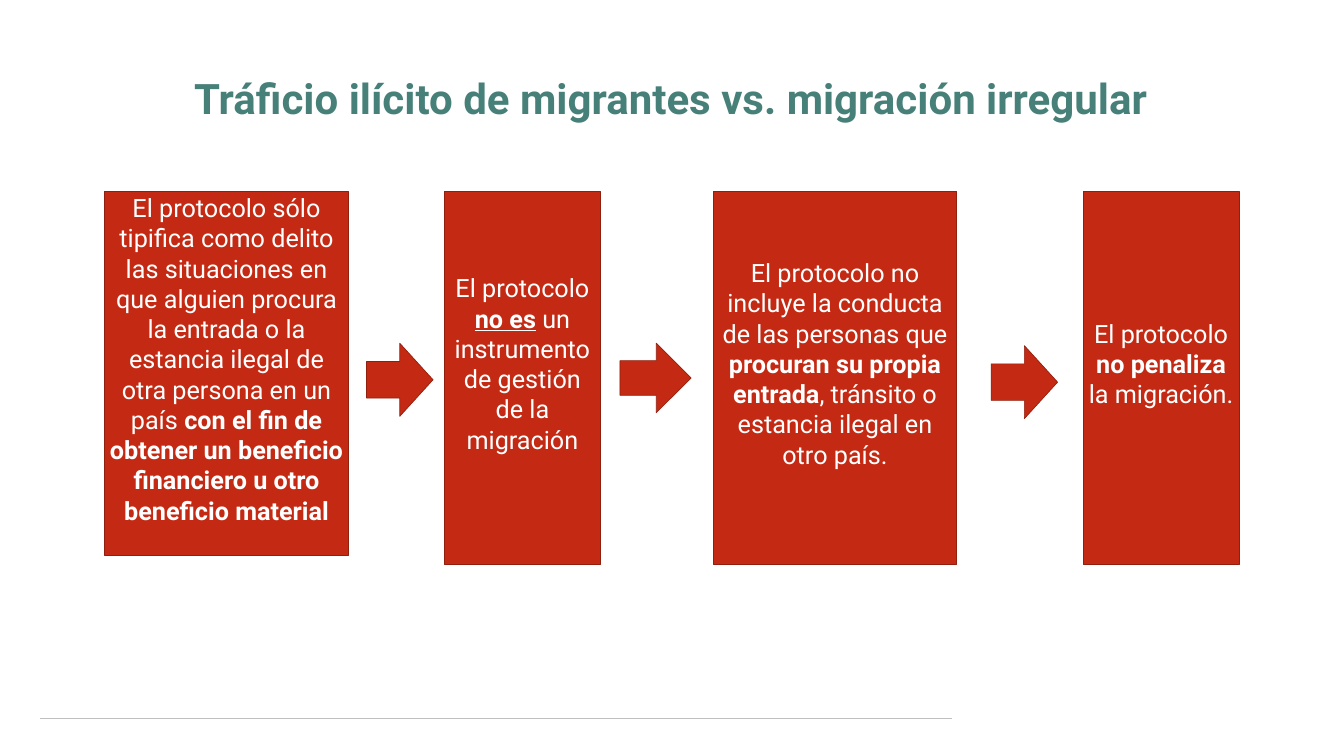
from lxml import etree
from pptx import Presentation
from pptx import util as u
from pptx.dml import color
from pptx.enum import shapes, text
from pptx.oxml import ns

HUES = {"title": "468078", "red": "C42A13", "edge": "911F0E",
        "white": "FFFFFF", "rule": "BFBFBF"}
FONT = "Roboto"
TOP, WIDE, SLIM, TALL = 9.65, 12.27, 7.85, 18.8

# left, width, height, runs as (words, style); b is bold, u is underlined
STEPS = [
    (5.28, WIDE, 18.34, [
        ("El protocolo sólo tipifica como delito las situaciones en que alguien "
         "procura la entrada o la estancia ilegal de otra persona en un país ", ""),
        ("con el fin de obtener un beneficio financiero u otro beneficio material", "b")]),
    (22.4, SLIM, TALL, [
        ("El protocolo ", ""), ("no es", "bu"),
        (" un instrumento de gestión de la migración", "")]),
    (35.94, WIDE, TALL, [
        ("El protocolo no incluye la conducta de las personas que ", ""),
        ("procuran su propia entrada", "b"),
        (", tránsito o estancia ilegal en otro país.", "")]),
    (54.58, SLIM, TALL, [
        ("El protocolo ", ""), ("no penaliza ", "b"), ("la migración.", "")]),
]
ARROWS = [(18.47, 17.3, 3.35, 3.68), (31.24, 17.3, 3.58, 3.5),
          (49.94, 17.42, 3.35, 3.68)]


def tint(name):
    return color.RGBColor.from_string(HUES[name])


def style(para, size, hue):
    para.alignment = text.PP_ALIGN.CENTER
    para.font.name = FONT
    para.font.size = u.Pt(size)
    para.font.color.rgb = tint(hue)


def add_rule(slide):
    line = slide.shapes.add_connector(
        shapes.MSO_CONNECTOR.STRAIGHT, u.Cm(2.03), u.Cm(36.2), u.Cm(47.96), u.Cm(36.2))
    line.line.color.rgb = tint("rule")
    line.line.width = u.Pt(2.25)
    etree.SubElement(line.element.spPr, ns.qn("a:effectLst"))


def set_title(slide, words):
    title = slide.shapes.title
    title.left, title.top, title.width, title.height = map(u.Cm, (2.03, 1.4, 63.53, 7.37))
    frame = title.text_frame
    frame.text = words
    frame.word_wrap = True
    frame.auto_size = text.MSO_AUTO_SIZE.NONE
    frame.vertical_anchor = text.MSO_ANCHOR.MIDDLE
    frame.margin_left = frame.margin_right = u.Cm(0.5)
    frame.margin_top = frame.margin_bottom = u.Cm(0.25)
    para = frame.paragraphs[0]
    style(para, 60, "title")
    para.font.bold = True
    para.line_spacing = 0.9


def add_block(slide, kind, *place):
    block = slide.shapes.add_shape(kind, *map(u.Cm, place))
    block.shadow.inherit = False
    block.fill.solid()
    block.fill.fore_color.rgb = tint("red")
    block.line.color.rgb = tint("edge")
    block.line.width = u.Pt(1)
    return block


def add_step(slide, left, width, height, runs):
    box = add_block(slide, shapes.MSO_SHAPE.RECTANGLE, left, TOP, width, height)
    frame = box.text_frame
    frame.word_wrap = True
    frame.vertical_anchor = text.MSO_ANCHOR.MIDDLE
    frame.margin_bottom = u.Cm(1.6)  # lifts the words above the middle
    para = frame.paragraphs[0]
    style(para, 36, "white")
    for words, marks in runs:
        run = para.add_run()
        run.text = words
        if "b" in marks:
            run.font.bold = True
        if "u" in marks:
            run.font.underline = True


def main():
    deck = Presentation()
    deck.slide_width, deck.slide_height = u.Cm(67.72), u.Cm(38.1)
    slide = deck.slides.add_slide(deck.slide_layouts[5])
    add_rule(slide)
    set_title(slide, "Tráficio ilícito de migrantes vs. migración irregular")
    for step in STEPS:
        add_step(slide, *step)
    for place in ARROWS:
        add_block(slide, shapes.MSO_SHAPE.RIGHT_ARROW, *place)
    deck.save("out.pptx")


if __name__ == "__main__":
    main()
